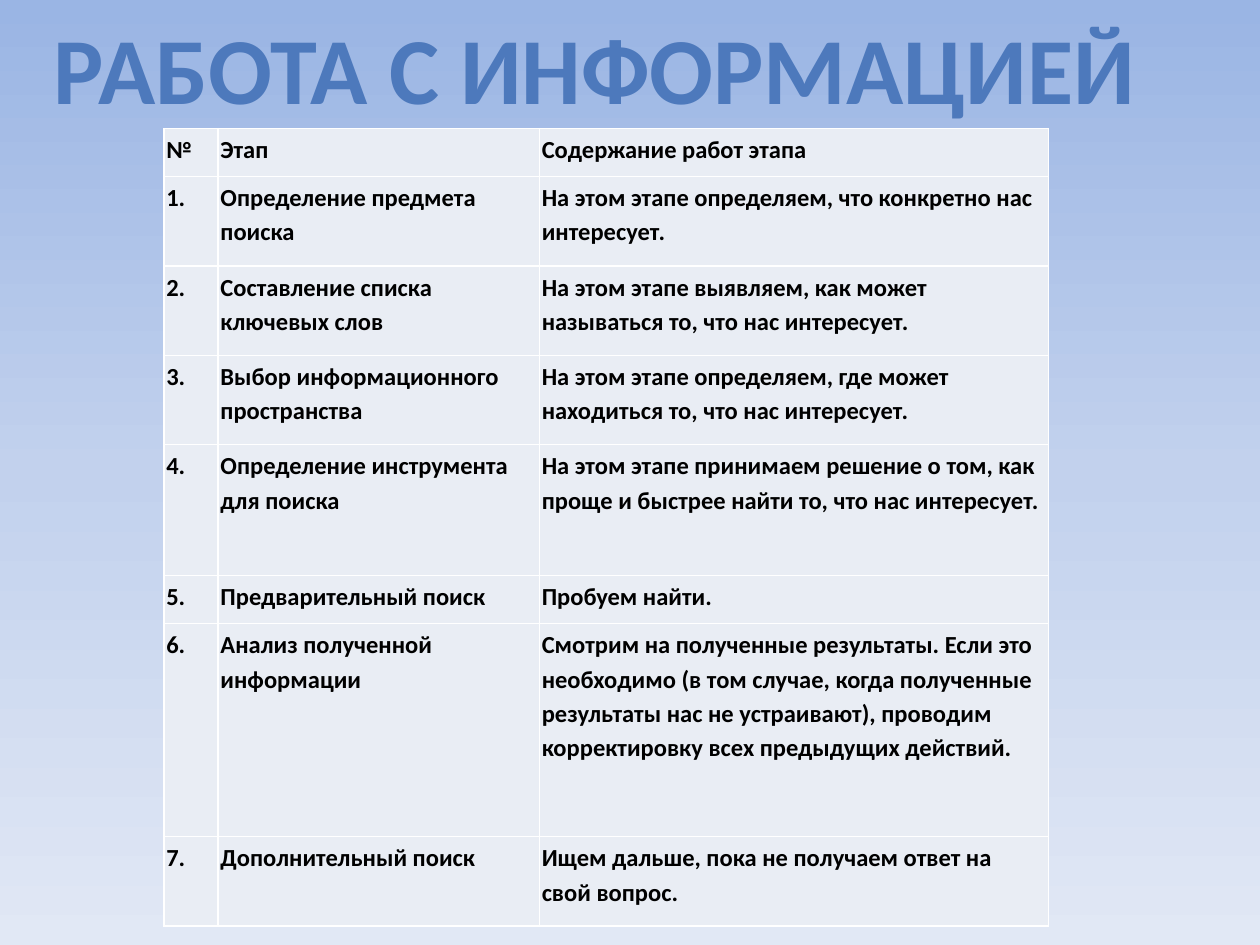
from lxml import etree
from pptx import Presentation
from pptx import util as u
from pptx.dml.color import RGBColor
from pptx.enum import text
from pptx.oxml.ns import qn

TITLE = "РАБОТА С ИНФОРМАЦИЕЙ"
TITLE_STOPS = [(0, "7494C9"), (49, "4D79BC"), (50, "346AAA"), (92, "325F94"), (100, "315D91")]
PAGE_STOPS = [(0, "9AB5E4"), (50, "C2D1ED"), (100, "E1E8F5")]
HEADER = ("№", "Этап", "Содержание работ этапа")
STAGES = [
    ("Определение предмета поиска",
     "На этом этапе определяем, что конкретно нас интересует."),
    ("Составление списка ключевых слов",
     "На этом этапе выявляем, как может называться то, что нас интересует."),
    ("Выбор информационного пространства",
     "На этом этапе определяем, где может находиться то, что нас интересует."),
    ("Определение инструмента для поиска",
     "На этом этапе принимаем решение о том, как проще и быстрее найти то, что нас интересует."),
    ("Предварительный поиск", "Пробуем найти."),
    ("Анализ полученной информации",
     "Смотрим на полученные результаты. Если это необходимо (в том случае, когда полученные "
     "результаты нас не устраивают), проводим корректировку всех предыдущих действий."),
    ("Дополнительный поиск", "Ищем дальше, пока не получаем ответ на свой вопрос."),
]
COLUMN_WIDTHS = (0.43, 2.55, 4.04)
ROW_HEIGHTS = (0.38, 0.71, 0.71, 0.71, 1.04, 0.38, 1.69, 0.71)
MARGINS = ("margin_left", "margin_top", "margin_right", "margin_bottom")


def color(value):
    return RGBColor.from_string(value)


def apply(target, values):
    for name, value in values.items():
        setattr(target, name, value)


def paint_gradient(fill, owner, stops):
    fill.gradient()
    fill.gradient_angle = 270
    stop_list = owner.find(".//" + qn("a:gsLst"))
    for stop in list(stop_list):
        stop_list.remove(stop)
    for position, value in stops:
        stop = etree.SubElement(stop_list, qn("a:gs"), pos=str(position * 1000))
        etree.SubElement(stop, qn("a:srgbClr"), val=value)


def add_borders(cell, value, width):
    properties = cell._tc.get_or_add_tcPr()
    for side in ("lnL", "lnR", "lnT", "lnB"):
        line = etree.SubElement(properties, qn("a:" + side), w=str(u.Pt(width)))
        fill = etree.SubElement(line, qn("a:solidFill"))
        etree.SubElement(fill, qn("a:srgbClr"), val=value)


def place_title(page, left, top, width, height):
    title = page.shapes.title
    apply(title, {"left": u.Inches(left), "top": u.Inches(top),
                  "width": u.Inches(width), "height": u.Inches(height)})
    apply(title.text_frame, {"word_wrap": False, "auto_size": text.MSO_AUTO_SIZE.SHAPE_TO_FIT_TEXT,
                             "vertical_anchor": text.MSO_ANCHOR.TOP})
    para = title.text_frame.paragraphs[0]
    para.alignment = text.PP_ALIGN.CENTER
    span = para.add_run()
    span.text = TITLE
    apply(span.font, {"name": "Calibri", "size": u.Pt(54), "bold": True})
    paint_gradient(span.font.fill, span._r, TITLE_STOPS)


def fill_cell(cell, words):
    add_borders(cell, "FFFFFF", 1)
    cell.fill.solid()
    cell.fill.fore_color.rgb = color("E9EDF4")
    apply(cell, dict.fromkeys(MARGINS, u.Inches(0.02)))
    para = cell.text_frame.paragraphs[0]
    para.line_spacing = 1.15
    span = para.add_run()
    span.text = words
    apply(span.font, {"name": "Calibri", "size": u.Pt(14), "bold": True})
    span.font.color.rgb = color("000000")


def place_stages(page, left, top, width, height):
    rows = [HEADER] + [(f"{number}.", *stage) for number, stage in enumerate(STAGES, 1)]
    table = page.shapes.add_table(len(rows), len(HEADER), u.Inches(left), u.Inches(top),
                                  u.Inches(width), u.Inches(height)).table
    apply(table, {"first_row": False, "horz_banding": False})
    for column, size in zip(table.columns, COLUMN_WIDTHS):
        column.width = u.Inches(size)
    for row, size, words in zip(table.rows, ROW_HEIGHTS, rows):
        row.height = u.Inches(size)
        for cell, value in zip(row.cells, words):
            fill_cell(cell, value)


def main():
    deck = Presentation()
    apply(deck, {"slide_width": u.Inches(10), "slide_height": u.Inches(7.5)})
    page = deck.slides.add_slide(deck.slide_layouts[5])
    paint_gradient(page.background.fill, page.element, PAGE_STOPS)
    place_stages(page, 1.3, 1.02, sum(COLUMN_WIDTHS), sum(ROW_HEIGHTS))
    place_title(page, 0.28, 0.03, 8.88, 1.01)
    deck.save("out.pptx")


if __name__ == "__main__":
    main()
